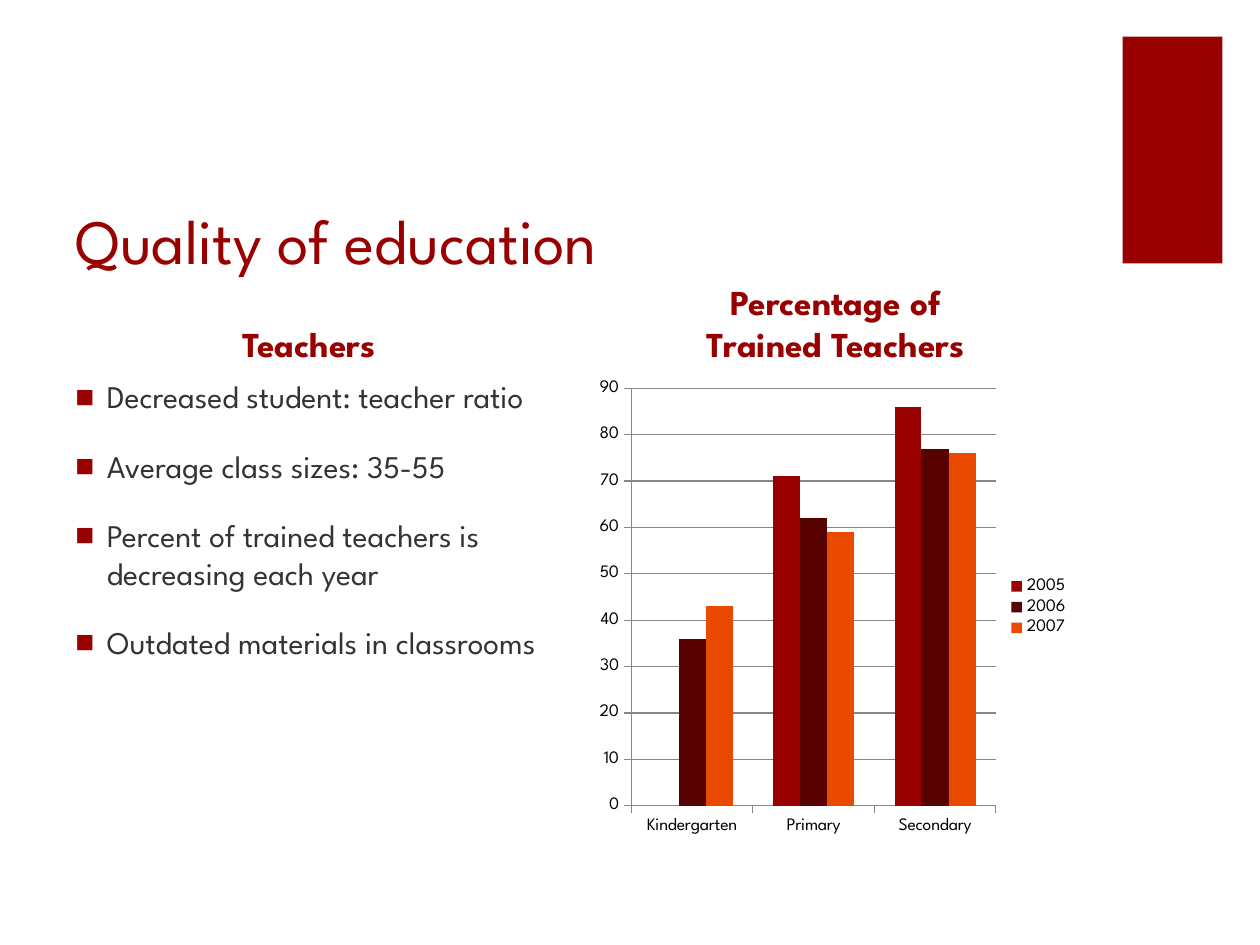
from dataclasses import dataclass

from lxml import etree
from pptx import Presentation
from pptx.chart.data import CategoryChartData
from pptx.dml.color import RGBColor
from pptx.enum.chart import XL_CHART_TYPE, XL_LEGEND_POSITION, XL_TICK_MARK
from pptx.enum.shapes import MSO_SHAPE
from pptx.enum.text import MSO_ANCHOR, MSO_AUTO_SIZE, PP_ALIGN
from pptx.oxml.ns import qn
from pptx.util import Pt

COLUMNS = XL_CHART_TYPE.COLUMN_CLUSTERED
LEGEND_RIGHT = XL_LEGEND_POSITION.RIGHT
TICK_OUTSIDE = XL_TICK_MARK.OUTSIDE
RECTANGLE = MSO_SHAPE.RECTANGLE
TOP, BOTTOM = MSO_ANCHOR.TOP, MSO_ANCHOR.BOTTOM
NO_AUTOFIT = MSO_AUTO_SIZE.NONE
LEFT, CENTER = PP_ALIGN.LEFT, PP_ALIGN.CENTER

FONT = "League Spartan"
COLORS = {
    "red": "990000",
    "maroon": "580101",
    "orange": "E94A00",
    "body": "333333",
    "black": "000000",
    "grid": "868686",
}


@dataclass
class Box:
    left: float
    top: float
    width: float
    height: float

    def lengths(self):
        return Pt(self.left), Pt(self.top), Pt(self.width), Pt(self.height)


@dataclass
class YearSeries:
    year: str
    values: tuple
    color: str


# Two equal columns: headings above, content below
LEFT_EDGE, RIGHT_EDGE, COLUMN_WIDTH = 36, 337, 281
HEADING_TOP, HEADING_HEIGHT = 162, 50
CONTENT_TOP, CONTENT_HEIGHT = 212, 270

HEADINGS = [
    (LEFT_EDGE, ["Teachers"]),
    (RIGHT_EDGE, ["Percentage of", "Trained Teachers"]),
]
POINTS = [
    "Decreased student: teacher ratio",
    "Average class sizes: 35-55",
    "Percent of trained teachers is decreasing each year",
    "Outdated materials in classrooms",
]
LEVELS = ["Kindergarten", "Primary", "Secondary"]
TRAINED_TEACHERS = [
    YearSeries("2005", (None, 71, 86), "red"),
    YearSeries("2006", (36, 62, 77), "maroon"),
    YearSeries("2007", (43, 59, 76), "orange"),
]


def rgb(name: str) -> RGBColor:
    return RGBColor.from_string(COLORS[name])


def add_bullet(paragraph, color: str) -> None:
    properties = paragraph._p.get_or_add_pPr()
    properties.set("marL", str(Pt(18)))
    properties.set("indent", str(-Pt(18)))
    bullet_color = etree.SubElement(properties, qn("a:buClr"))
    etree.SubElement(bullet_color, qn("a:srgbClr"), val=COLORS[color])
    etree.SubElement(properties, qn("a:buFont"), typeface="Arial")
    etree.SubElement(properties, qn("a:buChar"), char="■")


def write_text(shape, lines: list[str], *, size: float, color: str,
               bold: bool = False, align=LEFT, anchor=TOP,
               bullet_color: str = "", gap: float = 0) -> None:
    frame = shape.text_frame
    frame.word_wrap = True
    frame.auto_size = NO_AUTOFIT
    frame.vertical_anchor = anchor
    for index, line in enumerate(lines):
        paragraph = frame.add_paragraph() if index else frame.paragraphs[0]
        paragraph.alignment = align
        if index and gap:
            paragraph.space_before = Pt(gap)
        if bullet_color:
            add_bullet(paragraph, bullet_color)
        run = paragraph.add_run()
        run.text = line
        run.font.name = FONT
        run.font.size = Pt(size)
        run.font.bold = bold
        run.font.color.rgb = rgb(color)


def add_accent(slide, box: Box) -> None:
    accent = slide.shapes.add_shape(RECTANGLE, *box.lengths())
    accent.shadow.inherit = False
    accent.fill.solid()
    accent.fill.fore_color.rgb = rgb("red")
    accent.line.fill.background()


def style_line(line) -> None:
    line.color.rgb = rgb("grid")
    line.width = Pt(0.75)


def add_teacher_chart(slide, box: Box) -> None:
    data = CategoryChartData()
    data.categories = LEVELS
    for entry in TRAINED_TEACHERS:
        data.add_series(entry.year, entry.values)
    chart = slide.shapes.add_chart(COLUMNS, *box.lengths(), data).chart
    chart.has_title = False
    chart.font.name = FONT
    chart.font.size = Pt(10)
    chart.font.color.rgb = rgb("black")
    chart.has_legend = True
    chart.legend.position = LEGEND_RIGHT
    chart.legend.include_in_layout = False

    plot = chart.plots[0]
    plot.vary_by_categories = False
    plot.gap_width = 150
    for series, entry in zip(plot.series, TRAINED_TEACHERS):
        series.format.fill.solid()
        series.format.fill.fore_color.rgb = rgb(entry.color)

    for axis in (chart.category_axis, chart.value_axis):
        axis.major_tick_mark = TICK_OUTSIDE
        style_line(axis.format.line)
    value_axis = chart.value_axis
    value_axis.minimum_scale = 0
    value_axis.maximum_scale = 90
    value_axis.major_unit = 10
    value_axis.has_major_gridlines = True
    style_line(value_axis.major_gridlines.format.line)


def main() -> None:
    presentation = Presentation()
    presentation.slide_width = Pt(720)
    presentation.slide_height = Pt(540)
    slide = presentation.slides.add_slide(presentation.slide_layouts[5])

    # Corner accent
    add_accent(slide, Box(641.5, 21, 57, 129.6))

    # Title
    title = slide.shapes.title
    title.left, title.top, title.width, title.height = Box(
        LEFT_EDGE, 72, 582, 90).lengths()
    write_text(title, ["Quality of education"], size=36, color="red", anchor=BOTTOM)

    # Column headings
    for left, lines in HEADINGS:
        box = Box(left, HEADING_TOP, COLUMN_WIDTH, HEADING_HEIGHT)
        heading = slide.shapes.add_textbox(*box.lengths())
        write_text(heading, lines, size=20, color="red", bold=True,
                   align=CENTER, anchor=BOTTOM)

    # Bulleted points
    box = Box(LEFT_EDGE, CONTENT_TOP, COLUMN_WIDTH, CONTENT_HEIGHT)
    points = slide.shapes.add_textbox(*box.lengths())
    write_text(points, POINTS, size=18, color="body", bullet_color="red", gap=18)

    # Chart of trained teachers
    add_teacher_chart(slide, Box(RIGHT_EDGE, CONTENT_TOP, COLUMN_WIDTH, CONTENT_HEIGHT))

    presentation.save("out.pptx")


if __name__ == "__main__":
    main()
